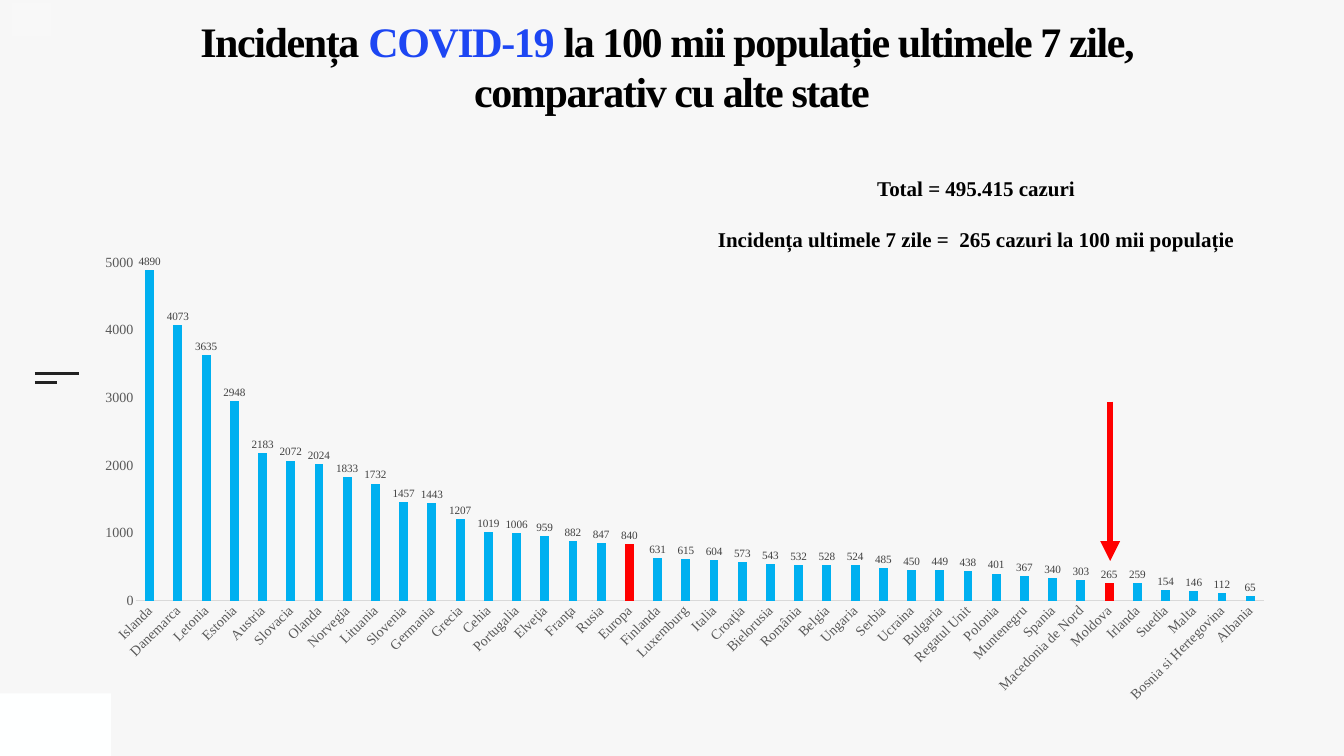
from dataclasses import dataclass

from lxml import etree
from pptx import Presentation
from pptx.chart import data as chart_data
from pptx.dml.color import RGBColor
from pptx.enum import chart as charts, shapes, text
from pptx.oxml import ns, parse_xml
from pptx.util import Inches, Pt


@dataclass(frozen=True)
class Theme:
    font: str = "Times New Roman"
    background: str = "F7F7F7"
    corner: str = "FEFFFF"
    badge: str = "F8F8F8"
    ink: str = "000000"
    mark: str = "222222"
    accent: str = "1D46F3"
    bar: str = "00B0F0"
    highlight: str = "FF0000"
    axis_text: str = "595959"
    axis_line: str = "D9D9D9"
    label_text: str = "404040"
    title_size: int = 60
    note_size: int = 30
    axis_size: int = 20
    label_size: int = 16


THEME = Theme()
HIGHLIGHTED = ("Europa", "Moldova")
INCIDENCE = {
    "Islanda": 4890, "Danemarca": 4073, "Letonia": 3635, "Estonia": 2948,
    "Austria": 2183, "Slovacia": 2072, "Olanda": 2024, "Norvegia": 1833,
    "Lituania": 1732, "Slovenia": 1457, "Germania": 1443, "Grecia": 1207,
    "Cehia": 1019, "Portugalia": 1006, "Elveţia": 959, "Franţa": 882,
    "Rusia": 847, "Europa": 840, "Finlanda": 631, "Luxemburg": 615,
    "Italia": 604, "Croaţia": 573, "Bielorusia": 543, "România": 532,
    "Belgia": 528, "Ungaria": 524, "Serbia": 485, "Ucraina": 450,
    "Bulgaria": 449, "Regatul Unit": 438, "Polonia": 401, "Muntenegru": 367,
    "Spania": 340, "Macedonia de Nord": 303, "Moldova": 265, "Irlanda": 259,
    "Suedia": 154, "Malta": 146, "Bosnia si Hertegovina": 112, "Albania": 65,
}


def rgb(value):
    return RGBColor.from_string(value)


def style_font(font, size, color, bold=False):
    font.name, font.size, font.bold = THEME.font, Pt(size), bold
    font.color.rgb = rgb(color)


def add_block(slide, box, color):
    block = slide.shapes.add_shape(
        shapes.MSO_SHAPE.RECTANGLE, *(Inches(v) for v in box))
    block.shadow.inherit = False
    block.fill.solid()
    block.fill.fore_color.rgb = rgb(color)
    block.line.fill.background()


def add_line(slide, start, end, color, width):
    line = slide.shapes.add_connector(
        shapes.MSO_CONNECTOR.STRAIGHT, *(Inches(v) for v in (*start, *end)))
    line.line.color.rgb = rgb(color)
    line.line.width = Pt(width)
    etree.SubElement(line._element.spPr, ns.qn("a:effectLst"))
    return line


def add_text_frame(slide, box, margin, anchor):
    frame = slide.shapes.add_textbox(*(Inches(v) for v in box)).text_frame
    frame.word_wrap = True
    frame.vertical_anchor = anchor
    frame.margin_left = frame.margin_right = Inches(margin)
    frame.margin_top = frame.margin_bottom = Inches(margin)
    return frame


def add_side_mark(slide, box):
    """A long and a half-length rule, one above the other."""
    left, top, width, height = box
    for y, length in ((top, width), (top + height, width / 2)):
        add_line(slide, (left, y), (left + length, y), THEME.mark, 3)


def add_title(slide, box):
    frame = add_text_frame(slide, box, 0, text.MSO_ANCHOR.TOP)
    heading = frame.paragraphs[0]
    heading.alignment = text.PP_ALIGN.CENTER
    heading.line_spacing = Pt(72)
    heading.text = "Incidența "
    heading.add_run().text = "COVID-19"
    heading.add_run().text = " la 100 mii populație ultimele 7 zile, "
    heading.add_line_break()
    heading.add_run().text = "comparativ cu alte state"
    for run in heading.runs:
        color = THEME.accent if run.text == "COVID-19" else THEME.ink
        style_font(run.font, THEME.title_size, color, bold=True)
        run.font._element.set("spc", "-200")


def add_totals(slide, box):
    frame = add_text_frame(slide, box, 0.06, text.MSO_ANCHOR.MIDDLE)
    frame.text = ("Total = 495.415 cazuri\n"
                  "Incidența ultimele 7 zile =  265 cazuri la 100 mii populație")
    for paragraph in frame.paragraphs:
        paragraph.alignment = text.PP_ALIGN.CENTER
        style_font(paragraph.runs[0].font, THEME.note_size, THEME.ink, bold=True)
    frame.paragraphs[1].space_before = Pt(36)


def set_plot_layout(chart, x, y, width, height):
    plot_area = chart._chartSpace.chart.plotArea
    for old in plot_area.findall(ns.qn("c:layout")):
        plot_area.remove(old)
    sizes = "".join(f'<c:{tag} val="{value}"/>' for tag, value in
                    (("x", x), ("y", y), ("w", width), ("h", height)))
    plot_area.insert(0, parse_xml(
        f'<c:layout {ns.nsdecls("c")}><c:manualLayout>'
        '<c:layoutTarget val="inner"/><c:xMode val="edge"/>'
        f'<c:yMode val="edge"/>{sizes}</c:manualLayout></c:layout>'))


def add_incidence_chart(slide, box):
    data = chart_data.CategoryChartData(number_format="0")
    data.categories = list(INCIDENCE)
    data.add_series("Series 1", list(INCIDENCE.values()))
    chart = slide.shapes.add_chart(
        charts.XL_CHART_TYPE.COLUMN_CLUSTERED,
        *(Inches(v) for v in box), data).chart
    chart.has_legend = chart.has_title = False
    style_font(chart.font, 24, THEME.ink)
    set_plot_layout(chart, 0.064, 0.029, 0.901, 0.718)

    # Axes
    countries, scale = chart.category_axis, chart.value_axis
    for axis in (countries, scale):
        axis.has_major_gridlines = False
        axis.major_tick_mark = axis.minor_tick_mark = charts.XL_TICK_MARK.NONE
        style_font(axis.tick_labels.font, THEME.axis_size, THEME.axis_text)
    countries.format.line.color.rgb = rgb(THEME.axis_line)
    countries.format.line.width = Pt(0.75)
    countries._element.find(
        f'{ns.qn("c:txPr")}/{ns.qn("a:bodyPr")}').set("rot", "-2700000")
    scale.format.line.fill.background()
    scale.minimum_scale, scale.maximum_scale, scale.major_unit = 0, 5500, 1000
    scale.tick_labels.number_format = "0"
    scale.tick_labels.number_format_is_linked = False

    # Bars
    plot = chart.plots[0]
    plot.vary_by_categories = False
    plot.gap_width, plot.overlap = 219, -27
    series = plot.series[0]
    series.format.fill.solid()
    series.format.fill.fore_color.rgb = rgb(THEME.bar)
    for index, country in enumerate(INCIDENCE):
        if country in HIGHLIGHTED:
            fill = series.points[index].format.fill
            fill.solid()
            fill.fore_color.rgb = rgb(THEME.highlight)

    # Values above the bars
    labels = series.data_labels
    labels.show_value = True
    labels.position = charts.XL_LABEL_POSITION.OUTSIDE_END
    labels.number_format, labels.number_format_is_linked = "0", False
    style_font(labels.font, THEME.label_size, THEME.label_text)


def add_moldova_arrow(slide, box):
    left, top, width, height = box
    x = left + width / 2
    arrow = add_line(slide, (x, top), (x, top + height), THEME.highlight, 9.5)
    etree.SubElement(arrow.line._get_or_add_ln(), ns.qn("a:tailEnd"),
                     type="triangle")


def main():
    deck = Presentation()
    deck.slide_width, deck.slide_height = Inches(26.67), Inches(15)
    slide = deck.slides.add_slide(deck.slide_layouts[6])
    slide.background.fill.solid()
    slide.background.fill.fore_color.rgb = rgb(THEME.background)

    add_block(slide, (0, 13.76, 2.2, 1.24), THEME.corner)
    add_side_mark(slide, (0.69, 7.41, 0.88, 0.18))
    add_incidence_chart(slide, (1.1, 4.24, 24.86, 10.28))
    add_title(slide, (0, 0.3, 26.67, 1.58))
    add_moldova_arrow(slide, (22.03, 7.97, 0, 3.16))
    add_totals(slide, (13.33, 3.42, 12.08, 1.63))
    add_block(slide, (0.23, 0.06, 0.79, 0.67), THEME.badge)
    deck.save("out.pptx")


if __name__ == "__main__":
    main()
